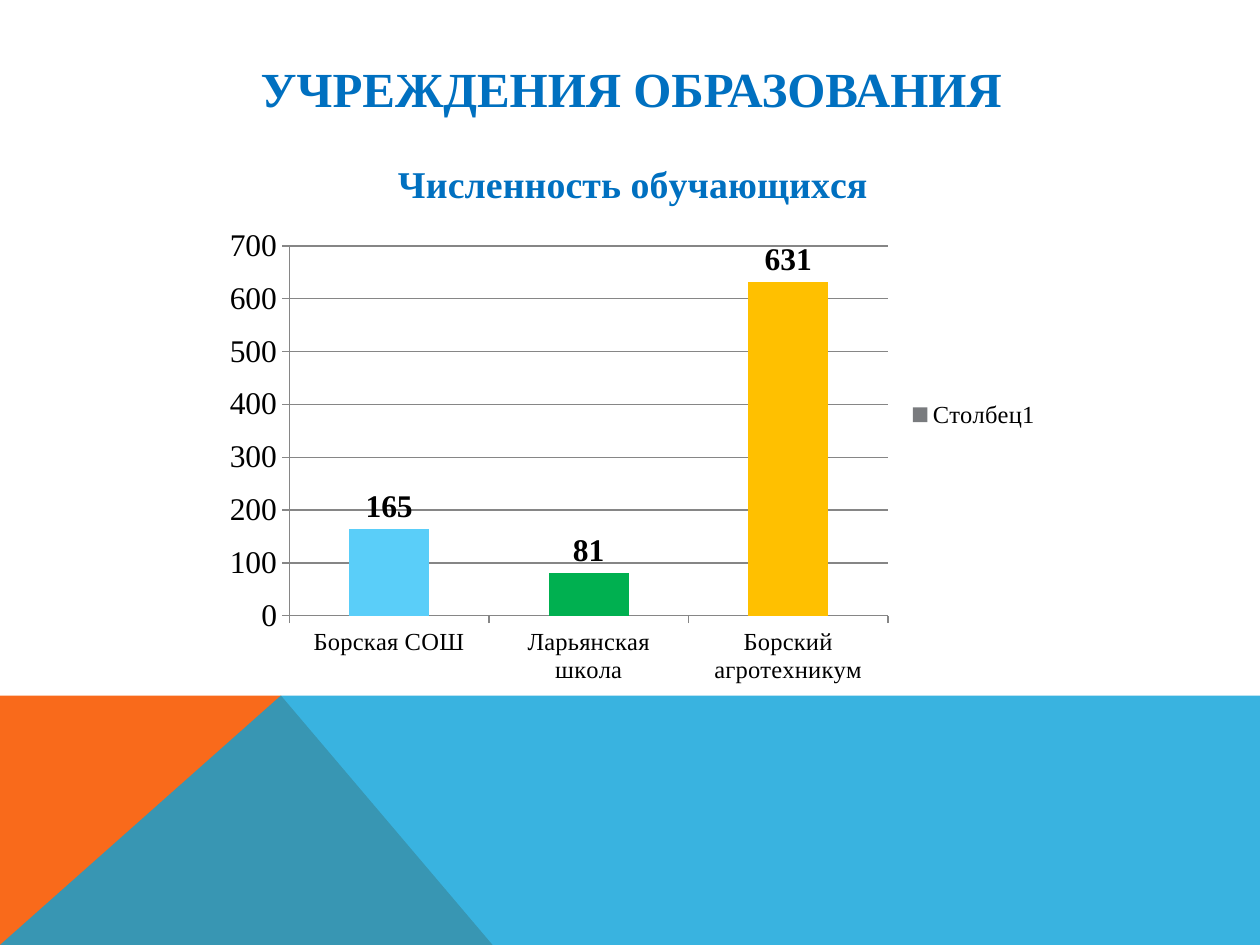
from lxml import etree
from pptx import Presentation, util as u
from pptx.chart.data import CategoryChartData
from pptx.dml.color import RGBColor
from pptx.enum import chart as ch, text
from pptx.oxml.ns import qn

WIDTH, HEIGHT = 10, 7.5
FONT = "Times New Roman"
COLORS = {
    "heading": "0070C0", "orange": "F96A1B", "band": "08A1D9",
    "text": "000000", "axis": "868686", "series": "797B7E",
}
HORIZON = 0.736  # top of the footer, as a share of the height
PEAK = 0.223     # where the two footer parts meet, as a share of the width
PUPILS = {
    "Борская СОШ": (165, "5ACEF9"),
    "Ларьянская школа": (81, "00B050"),
    "Борский агротехникум": (631, "FFC000"),
}


def color(name):
    return RGBColor.from_string(COLORS.get(name, name))


def area(left, top, width, height):
    """Turn shares of the slide into lengths."""
    return (u.Inches(left * WIDTH), u.Inches(top * HEIGHT),
            u.Inches(width * WIDTH), u.Inches(height * HEIGHT))


def style(font, size, color_name="text", bold=False):
    font.name, font.size, font.bold = FONT, u.Pt(size), bold
    font.color.rgb = color(color_name)


def add_polygon(slide, corners, fill, opacity=100):
    points = [(u.Inches(x * WIDTH), u.Inches(y * HEIGHT)) for x, y in corners]
    builder = slide.shapes.build_freeform(*points[0])
    builder.add_line_segments(points[1:], close=True)
    polygon = builder.convert_to_shape()
    polygon.shadow.inherit = False
    polygon.fill.solid()
    polygon.fill.fore_color.rgb = color(fill)
    polygon.line.fill.background()
    if opacity < 100:
        rgb = polygon.fill._xPr.find(".//" + qn("a:srgbClr"))
        etree.SubElement(rgb, qn("a:alpha"), val=str(opacity * 1000))


def add_heading(slide, words):
    heading = slide.shapes.add_textbox(*area(0.09, 0.053, 0.822, 0.08))
    frame = heading.text_frame
    frame.word_wrap = True
    frame.vertical_anchor = text.MSO_ANCHOR.MIDDLE
    paragraph = frame.paragraphs[0]
    paragraph.alignment = text.PP_ALIGN.CENTER
    run = paragraph.add_run()
    run.text = words
    style(run.font, 28, "heading", bold=True)


def style_axis(axis, size):
    axis.major_tick_mark = ch.XL_TICK_MARK.OUTSIDE
    axis.minor_tick_mark = ch.XL_TICK_MARK.NONE
    axis.format.line.color.rgb = color("axis")
    axis.format.line.width = u.Pt(0.75)
    style(axis.tick_labels.font, size)


def add_pupil_chart(slide):
    data = CategoryChartData(number_format="General")
    data.categories = list(PUPILS)
    data.add_series("Столбец1", [count for count, _ in PUPILS.values()])
    chart = slide.shapes.add_chart(
        ch.XL_CHART_TYPE.COLUMN_CLUSTERED,
        *area(0.169, 0.143, 0.667, 0.592), data).chart
    style(chart.font, 18)

    # Chart title
    chart.has_title = True
    chart.chart_title.include_in_layout = False
    title_run = chart.chart_title.text_frame.paragraphs[0].add_run()
    title_run.text = "Численность обучающихся"
    style(title_run.font, 21.6, "heading", bold=True)

    # Axes and legend
    style_axis(chart.category_axis, 14)
    style_axis(chart.value_axis, 18)
    chart.value_axis.has_major_gridlines = True
    gridlines = chart.value_axis.major_gridlines.format.line
    gridlines.color.rgb = color("axis")
    gridlines.width = u.Pt(0.75)
    chart.has_legend = True
    chart.legend.position = ch.XL_LEGEND_POSITION.RIGHT
    chart.legend.include_in_layout = False
    style(chart.legend.font, 14)

    # Columns, each in the colour of its school
    plot = chart.plots[0]
    plot.vary_by_categories = False
    plot.gap_width = 150
    pupils = plot.series[0]
    pupils.format.fill.solid()
    pupils.format.fill.fore_color.rgb = color("series")
    for index, (_, school_color) in enumerate(PUPILS.values()):
        fill = pupils.points[index].format.fill
        fill.solid()
        fill.fore_color.rgb = color(school_color)
    labels = pupils.data_labels
    labels.show_value = True
    labels.position = ch.XL_LABEL_POSITION.OUTSIDE_END
    style(labels.font, 18, bold=True)


def main():
    prs = Presentation()
    prs.slide_width, prs.slide_height = u.Inches(WIDTH), u.Inches(HEIGHT)
    slide = prs.slides.add_slide(prs.slide_layouts[6])

    # Footer: orange corner under a translucent blue band
    add_polygon(slide, [(0, 1), (0, HORIZON), (PEAK, HORIZON), (0.391, 1)],
                "orange")
    add_polygon(slide, [(0, 1), (PEAK, HORIZON), (1, HORIZON), (1, 1)],
                "band", opacity=80)

    add_heading(slide, "УЧРЕЖДЕНИЯ ОБРАЗОВАНИЯ")
    add_pupil_chart(slide)
    prs.save("out.pptx")


if __name__ == "__main__":
    main()
